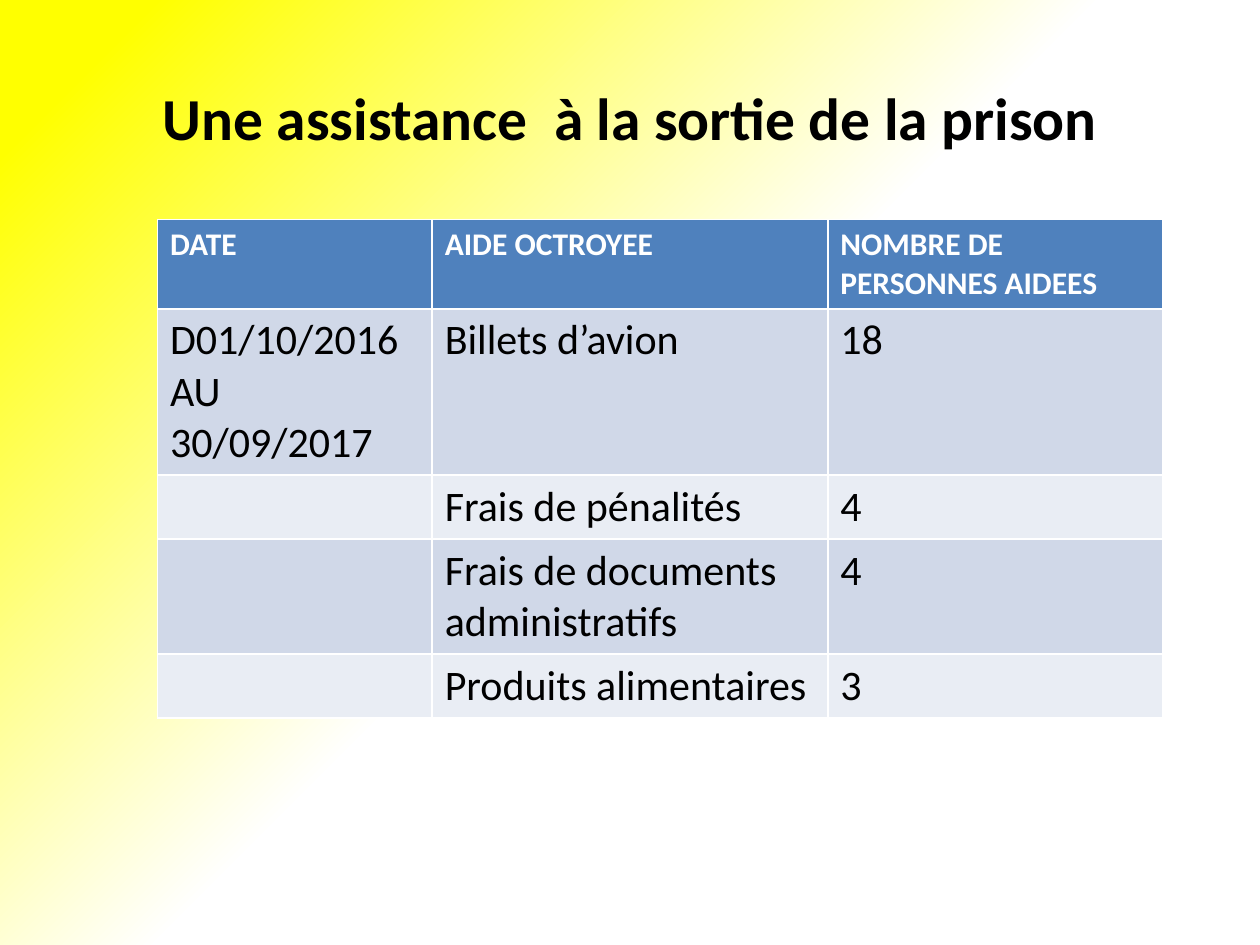
"""Build a slide with a table of the assistance given on release from prison."""
from pptx import Presentation
from pptx.dml.color import RGBColor
from pptx.enum.text import MSO_ANCHOR, PP_ALIGN
from pptx.util import Inches, Pt

MIDDLE = MSO_ANCHOR.MIDDLE
CENTER = PP_ALIGN.CENTER
TITLE_ONLY = 5

COLORS = {
    "yellow": "FFFF00",
    "white": "FFFFFF",
    "black": "000000",
    "header": "4F81BD",
    "dark band": "D0D8E8",
    "light band": "E9EDF4",
}
FORMATS = {
    "title": {"name": "Calibri", "size": Pt(34), "bold": True},
    "header": {"name": "Calibri", "size": Pt(18), "bold": True},
    "body": {"name": "Calibri", "size": Pt(24), "bold": False},
}
COLUMN_WIDTHS = [2.18, 3.14, 2.66]
ROW_HEIGHTS = [0.68, 0.39, 0.39, 0.39, 0.39]
ROWS = [
    ["DATE", "AIDE OCTROYEE", "NOMBRE DE PERSONNES AIDEES"],
    ["D01/10/2016 AU  30/09/2017", "Billets d’avion", "18"],
    ["", "Frais de pénalités", "4"],
    ["", "Frais de documents administratifs", "4"],
    ["", "Produits alimentaires", "3"],
]


def color(name):
    return RGBColor.from_string(COLORS[name])


def write(frame, text, style, color_name):
    paragraph = frame.paragraphs[0]
    span = paragraph.add_run()
    span.text = text
    for attribute, value in FORMATS[style].items():
        setattr(span.font, attribute, value)
    span.font.color.rgb = color(color_name)
    return paragraph


deck = Presentation()
deck.slide_width, deck.slide_height = Inches(10), Inches(7.5)
page = deck.slides.add_slide(deck.slide_layouts[TITLE_ONLY])

background = page.background.fill
background.gradient()
background.gradient_angle = 315
for stop, position, name in zip(background.gradient_stops, [0.07, 0.5], ["yellow", "white"]):
    stop.position = position
    stop.color.rgb = color(name)

title = page.shapes.title
title.left, title.top = Inches(0.5), Inches(0.3)
title.width, title.height = Inches(9), Inches(1.25)
title.text_frame.vertical_anchor = MIDDLE
heading = write(title.text_frame, "Une assistance  à la sortie de la prison", "title", "black")
heading.alignment = CENTER

table = page.shapes.add_table(
    len(ROWS), len(COLUMN_WIDTHS), Inches(1.25), Inches(1.74),
    Inches(sum(COLUMN_WIDTHS)), Inches(sum(ROW_HEIGHTS)),
).table
for column, width in zip(table.columns, COLUMN_WIDTHS):
    column.width = Inches(width)
for index, (row, height, texts) in enumerate(zip(table.rows, ROW_HEIGHTS, ROWS)):
    row.height = Inches(height)
    if index == 0:
        style, text_color, fill = "header", "white", "header"
    else:
        style, text_color = "body", "black"
        fill = "dark band" if index % 2 else "light band"
    for cell, text in zip(row.cells, texts):
        cell.fill.solid()
        cell.fill.fore_color.rgb = color(fill)
        if text:
            write(cell.text_frame, text, style, text_color)

deck.save("out.pptx")
